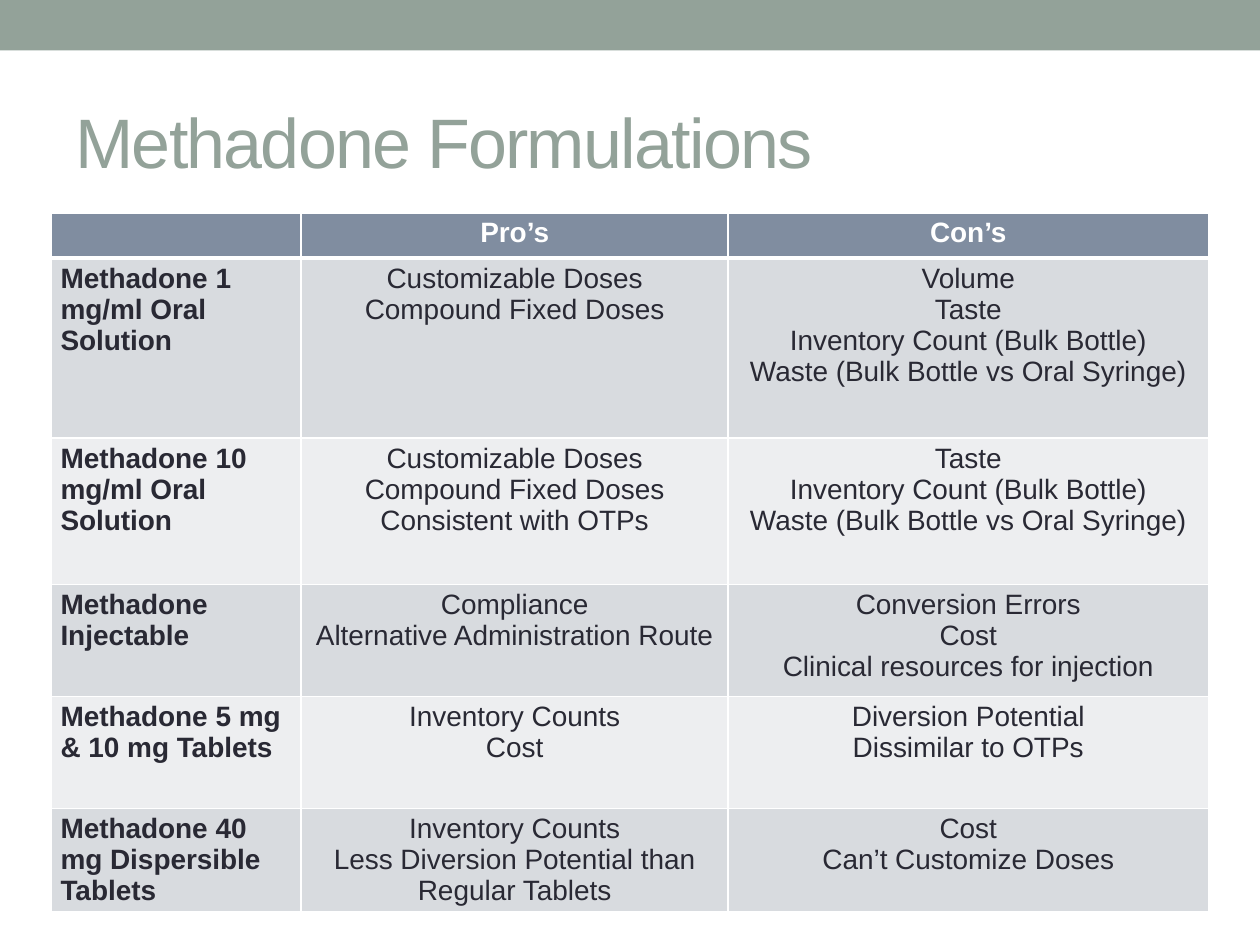
import pptx
import pptx.util
import pptx.dml.color
import pptx.enum.shapes
import pptx.enum.text
import pptx.oxml
import pptx.oxml.ns
from pptx.util import Cm

SAGE, SLATE, INK, WHITE = "93A299", "808DA0", "292934", "FFFFFF"
BANDS = ("D8DBDF", "EDEEF0")

COLUMN_WIDTHS = (5.03, 8.61, 9.68)
ROW_HEIGHTS = (0.86, 3.63, 2.95, 2.26, 2.26, 2.06)

HEADINGS = ("", "Pro’s", "Con’s")
FORMULATIONS = (
    ("Methadone 1 mg/ml Oral Solution",
     ("Customizable Doses", "Compound Fixed Doses"),
     ("Volume", "Taste", "Inventory Count (Bulk Bottle)",
      "Waste (Bulk Bottle vs Oral Syringe)")),
    ("Methadone 10 mg/ml Oral Solution",
     ("Customizable Doses", "Compound Fixed Doses", "Consistent with OTPs"),
     ("Taste", "Inventory Count (Bulk Bottle)",
      "Waste (Bulk Bottle vs Oral Syringe)")),
    ("Methadone Injectable",
     ("Compliance", "Alternative Administration Route"),
     ("Conversion Errors", "Cost", "Clinical resources for injection")),
    ("Methadone 5 mg & 10 mg Tablets",
     ("Inventory Counts", "Cost"),
     ("Diversion Potential", "Dissimilar to OTPs")),
    ("Methadone 40 mg Dispersible Tablets",
     ("Inventory Counts", "Less Diversion Potential than Regular Tablets"),
     ("Cost", "Can’t Customize Doses")),
)


def rgb(value):
    return pptx.dml.color.RGBColor.from_string(value)


def write(frame, lines, size=16, color=INK, bold=False, centered=False, spacing=None):
    """Fill a text frame with one paragraph per line."""
    align = pptx.enum.text.PP_ALIGN
    for index, line in enumerate(lines):
        paragraph = frame.add_paragraph() if index else frame.paragraphs[0]
        paragraph.alignment = align.CENTER if centered else align.LEFT
        run = paragraph.add_run()
        run.text = line
        run.font.name = "Arial"
        run.font.size = pptx.util.Pt(size)
        run.font.bold = bold
        run.font.color.rgb = rgb(color)
        if spacing is not None:
            run.font._element.set("spc", str(int(spacing * 100)))


def set_borders(cell, **widths):
    """Draw white cell borders, with widths in points by side."""
    properties = cell._tc.get_or_add_tcPr()
    for position, (side, width) in enumerate(widths.items()):
        line = pptx.oxml.parse_xml(
            f'<a:{side} {pptx.oxml.ns.nsdecls("a")} w="{pptx.util.Pt(width)}">'
            f'<a:solidFill><a:srgbClr val="{WHITE}"/></a:solidFill></a:{side}>')
        properties.insert(position, line)


def fill_cell(cell, lines, fill, top=1, bottom=1, **text_format):
    cell.margin_left = cell.margin_right = Cm(0.18)
    cell.margin_top = cell.margin_bottom = Cm(0.1)
    cell.fill.solid()
    cell.fill.fore_color.rgb = rgb(fill)
    set_borders(cell, lnL=1, lnR=1, lnT=top, lnB=bottom)
    write(cell.text_frame, lines, **text_format)


def add_band(slide, width):
    band = slide.shapes.add_shape(
        pptx.enum.shapes.MSO_SHAPE.RECTANGLE, 0, 0, width, Cm(1.02))
    band.shadow.inherit = False
    band.fill.solid()
    band.fill.fore_color.rgb = rgb(SAGE)
    band.line.fill.background()


def add_title(slide, text):
    title = slide.shapes.add_textbox(Cm(1.27), Cm(1.47), Cm(22.86), Cm(2.74))
    title.text_frame.word_wrap = True
    title.text_frame.vertical_anchor = pptx.enum.text.MSO_ANCHOR.MIDDLE
    write(title.text_frame, [text], size=40, color=SAGE, spacing=-1)


def add_formulation_table(slide):
    table = slide.shapes.add_table(
        len(ROW_HEIGHTS), len(COLUMN_WIDTHS), Cm(1.04), Cm(4.29),
        Cm(sum(COLUMN_WIDTHS)), Cm(sum(ROW_HEIGHTS))).table
    for column, width in zip(table.columns, COLUMN_WIDTHS):
        column.width = Cm(width)
    for row, height in zip(table.rows, ROW_HEIGHTS):
        row.height = Cm(height)

    # Heading row
    for column, heading in enumerate(HEADINGS):
        fill_cell(table.cell(0, column), [heading], SLATE, bottom=3,
                  color=WHITE, bold=True, centered=True)

    # One banded row per formulation
    for row, (name, pros, cons) in enumerate(FORMULATIONS, start=1):
        fill = BANDS[(row - 1) % 2]
        top = 3 if row == 1 else 1
        fill_cell(table.cell(row, 0), [name], fill, top=top, bold=True)
        for column, points in enumerate((pros, cons), start=1):
            fill_cell(table.cell(row, column), points, fill, top=top, centered=True)


def main():
    deck = pptx.Presentation()
    deck.slide_width, deck.slide_height = Cm(25.4), Cm(19.05)
    slide = deck.slides.add_slide(deck.slide_layouts[6])
    add_band(slide, deck.slide_width)
    add_formulation_table(slide)
    add_title(slide, "Methadone Formulations")
    deck.save("out.pptx")


if __name__ == "__main__":
    main()
